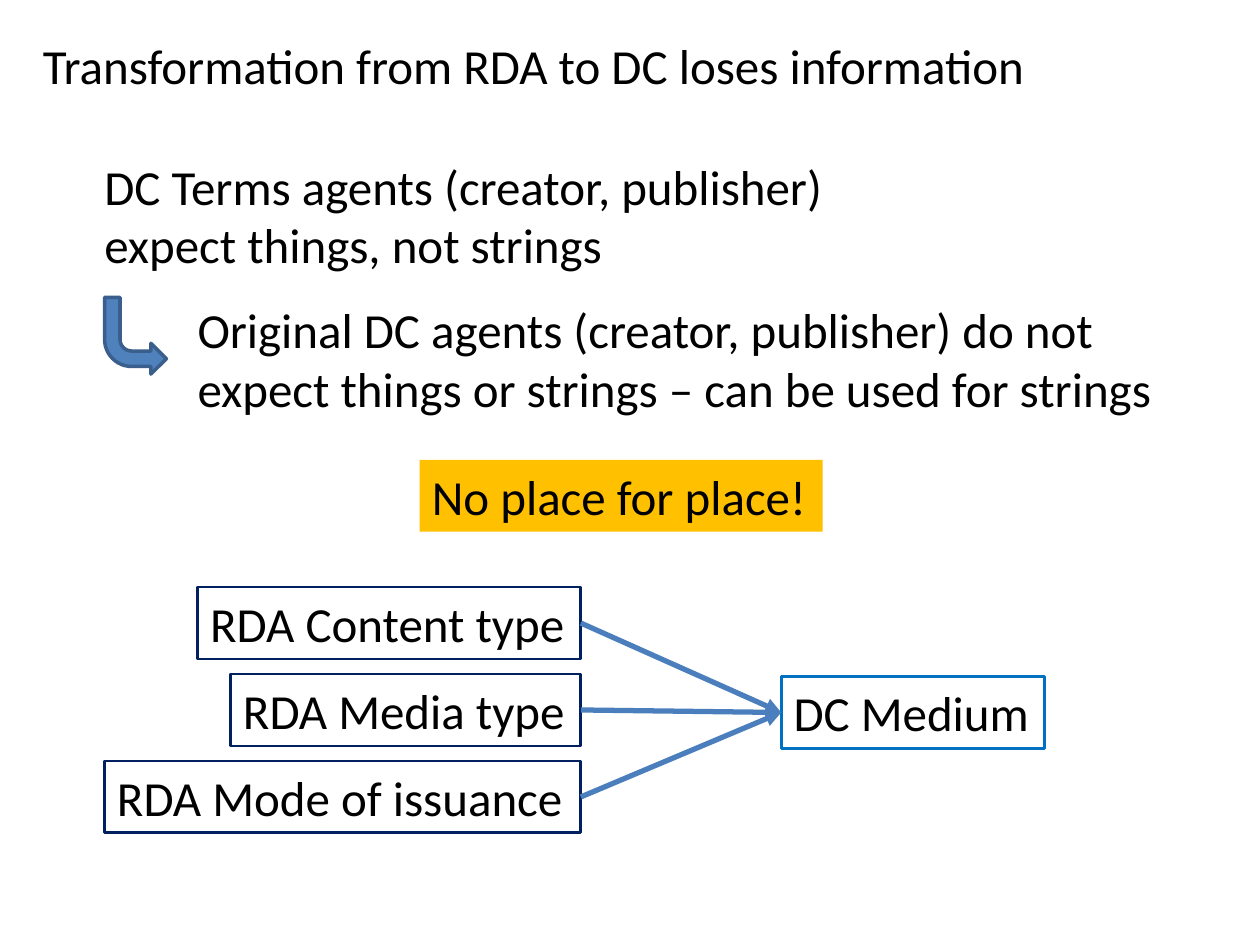
from dataclasses import dataclass

from lxml.etree import SubElement
from pptx import Presentation
from pptx.dml.color import RGBColor
from pptx.enum.shapes import MSO_CONNECTOR, MSO_SHAPE
from pptx.enum.text import MSO_ANCHOR, MSO_AUTO_SIZE, PP_ALIGN
from pptx.oxml.ns import qn
from pptx.util import Inches, Pt

COLORS = {
    "text": "000000", "rda": "002060", "dc": "0070C0", "link": "4B7EBC",
    "arrow": "4F81BD", "arrow_edge": "3A5F8C", "notice": "FFC000",
}

# Grid of 10 columns by 7.5 rows
SLIDE_W, SLIDE_H = Inches(10), Inches(7.5)
COLUMN, ROW = SLIDE_W / 10, SLIDE_H / 7.5
LINE_ROWS, TWO_LINE_ROWS = 0.57, 1.04
RDA_RIGHT, RDA_TOP, RDA_STEP = 4.61, 4.66, 0.69


@dataclass(frozen=True)
class Area:
    left: float
    top: float
    width: float
    height: float = LINE_ROWS

    def emu(self) -> tuple[int, ...]:
        return (int(self.left * COLUMN), int(self.top * ROW),
                int(self.width * COLUMN), int(self.height * ROW))


@dataclass(frozen=True)
class Element:
    label: str
    width: float


RDA_ELEMENTS = [
    Element("RDA Content type", 3.04),
    Element("RDA Media type", 2.78),
    Element("RDA Mode of issuance", 3.78),
]
AGENT_NOTES = [
    ("DC Terms agents (creator, publisher) expect things, not strings",
     Area(0.73, 1.19, 6.02, TWO_LINE_ROWS)),
    ("Original DC agents (creator, publisher) do not expect things or strings "
     "– can be used for strings", Area(1.47, 2.33, 8.27, TWO_LINE_ROWS)),
]


def color(name: str) -> RGBColor:
    return RGBColor.from_string(COLORS[name])


def write(shape, text: str, *, wrap: bool = False, size: float = 28,
          font: str = "Calibri", ink: str = "text") -> None:
    frame = shape.text_frame
    frame.text = text
    frame.word_wrap = wrap
    frame.auto_size = MSO_AUTO_SIZE.SHAPE_TO_FIT_TEXT
    frame.vertical_anchor = MSO_ANCHOR.TOP
    paragraph = frame.paragraphs[0]
    paragraph.alignment = PP_ALIGN.LEFT
    style = paragraph.runs[0].font
    style.name, style.size = font, Pt(size)
    style.color.rgb = color(ink)


def add_figure(slide, kind: MSO_SHAPE, area: Area, *, fill: str = "",
               edge: str = "", weight: float = 1.5):
    figure = slide.shapes.add_shape(kind, *area.emu())
    figure.shadow.inherit = False
    if fill:
        figure.fill.solid()
        figure.fill.fore_color.rgb = color(fill)
    else:
        figure.fill.background()
    if edge:
        figure.line.color.rgb = color(edge)
        figure.line.width = Pt(weight)
    else:
        figure.line.fill.background()
    return figure


def add_box(slide, label: str, area: Area, **style):
    box = add_figure(slide, MSO_SHAPE.RECTANGLE, area, **style)
    write(box, label)
    return box


def link(slide, source, target) -> None:
    arrow = slide.shapes.add_connector(MSO_CONNECTOR.STRAIGHT, 0, 0, 0, 0)
    arrow.begin_connect(source, 3)  # right side
    arrow.end_connect(target, 1)  # left side
    arrow.line.color.rgb = color("link")
    arrow.line.width = Pt(3)
    SubElement(arrow.line._get_or_add_ln(), qn("a:tailEnd"), type="triangle")
    SubElement(arrow._element.spPr, qn("a:effectLst"))


def main() -> None:
    deck = Presentation()
    deck.slide_width, deck.slide_height = SLIDE_W, SLIDE_H
    slide = deck.slides.add_slide(deck.slide_layouts[5])

    # Title
    title = slide.shapes.title
    title.left, title.top, title.width, title.height = Area(0.24, 0.23, 8.08).emu()
    write(title, "Transformation from RDA to DC loses information")

    # RDA elements, right-aligned, all leading to one DC element
    rda_boxes = [
        add_box(slide, element.label,
                Area(RDA_RIGHT - element.width, RDA_TOP + row * RDA_STEP, element.width),
                edge="rda")
        for row, element in enumerate(RDA_ELEMENTS)
    ]
    medium = add_box(slide, "DC Medium", Area(6.2, 5.37, 2.09), edge="dc")

    # Notes on agents
    for note, area in AGENT_NOTES:
        write(slide.shapes.add_textbox(*area.emu()), note, wrap=True)

    for rda_box in rda_boxes:
        link(slide, rda_box, medium)

    # Bent arrow from the first note to the second
    turn = add_figure(slide, MSO_SHAPE.BENT_ARROW, Area(0.83, 2.36, 0.49, 0.61),
                      fill="arrow", edge="arrow_edge", weight=2)
    turn._element.spPr.xfrm.set("flipV", "1")

    # Notice
    add_box(slide, "No place for place!", Area(3.33, 3.65, 3.2), fill="notice")

    deck.save("out.pptx")


if __name__ == "__main__":
    main()
